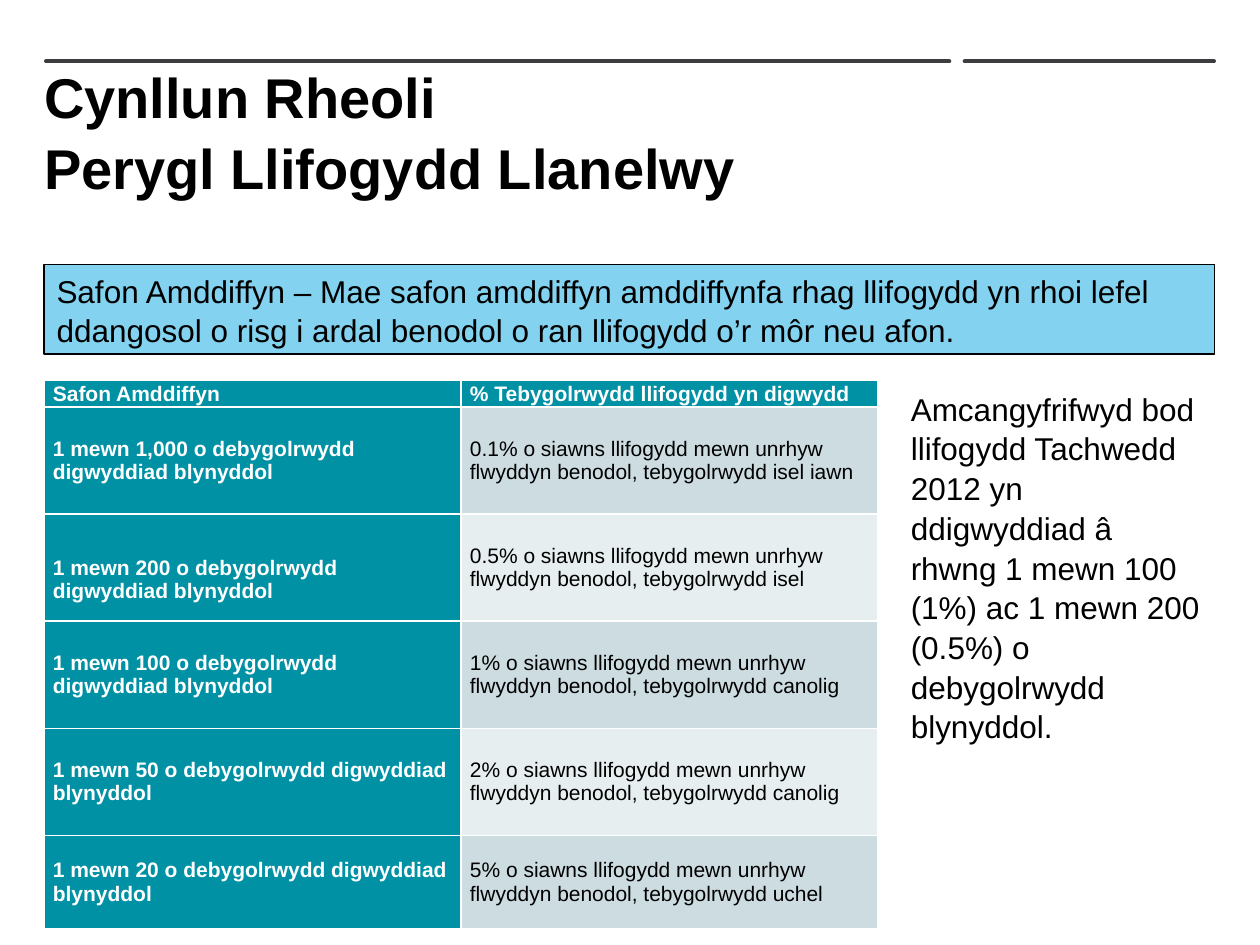
from pptx import Presentation
from pptx.dml.color import RGBColor
from pptx.enum import shapes, text
from pptx.util import Inches, Pt

BLACK = RGBColor(0x00, 0x00, 0x00)
WHITE = RGBColor(0xFF, 0xFF, 0xFF)
CHARCOAL = RGBColor(0x3C, 0x3C, 0x41)
SKY = RGBColor(0x82, 0xD2, 0xF0)
TEAL = RGBColor(0x00, 0x91, 0xA5)
BANDS = (RGBColor(0xCC, 0xDC, 0xE1), RGBColor(0xE7, 0xEE, 0xF0))

LEFT = 0.35
HEADINGS = ("Safon Amddiffyn", "% Tebygolrwydd llifogydd yn digwydd")
RISKS = (
    ("1,000", "0.1%", "isel iawn"),
    ("200", "0.5%", "isel"),
    ("100", "1%", "canolig"),
    ("50", "2%", "canolig"),
    ("20", "5%", "uchel"),
)
ROW_HEIGHTS = (0.21, 0.85, 0.85, 0.85, 0.85, 0.74)
LOWERED_ROW = 2


def write(frame, words, size=18, color=BLACK, bold=False, spacing=1.05,
          anchor=text.MSO_ANCHOR.TOP):
    frame.word_wrap = True
    frame.vertical_anchor = anchor
    para = frame.paragraphs[0]
    para.text = words
    para.alignment = text.PP_ALIGN.LEFT
    para.line_spacing = spacing
    para.font.name = "Arial"
    para.font.size = Pt(size)
    para.font.bold = bold
    para.font.color.rgb = color


def add_box(page, kind, left, top, width, height, fill):
    box = page.shapes.add_shape(
        kind, Inches(left), Inches(top), Inches(width), Inches(height))
    box.shadow.inherit = False
    box.fill.solid()
    box.fill.fore_color.rgb = fill
    box.line.fill.background()
    return box


def add_rule(page, left, width):
    rule = add_box(page, shapes.MSO_SHAPE.ROUNDED_RECTANGLE,
                   left, 0.47, width, 0.03, CHARCOAL)
    rule.adjustments[0] = 0.5


def set_title(page, words):
    title = page.shapes.title
    title.left, title.top = Inches(LEFT), Inches(0.36)
    title.width, title.height = Inches(7.2), Inches(1.34)
    frame = title.text_frame
    frame.auto_size = text.MSO_AUTO_SIZE.NONE
    frame.margin_left = frame.margin_right = 0
    frame.margin_top = frame.margin_bottom = 0
    write(frame, words, size=32, bold=True, anchor=text.MSO_ANCHOR.MIDDLE)


def add_callout(page, words):
    box = add_box(page, shapes.MSO_SHAPE.RECTANGLE, LEFT, 2.1, 9.29, 0.71, SKY)
    box.line.color.rgb = BLACK
    box.line.width = Pt(0.75)
    write(box.text_frame, words, anchor=text.MSO_ANCHOR.MIDDLE)


def add_note(page, words):
    box = page.shapes.add_textbox(
        Inches(7.13), Inches(3.03), Inches(2.52), Inches(2.83))
    write(box.text_frame, words)


def fill_cell(cell, words, fill, color, bold):
    cell.fill.solid()
    cell.fill.fore_color.rgb = fill
    cell.margin_left = cell.margin_right = Inches(0.07)
    cell.margin_top = cell.margin_bottom = 0
    cell.vertical_anchor = text.MSO_ANCHOR.MIDDLE
    write(cell.text_frame, words, size=12, color=color, bold=bold, spacing=1.0,
          anchor=None)


def add_risk_table(page):
    table = page.shapes.add_table(
        len(ROW_HEIGHTS), 2, Inches(LEFT), Inches(3.02),
        Inches(6.62), Inches(sum(ROW_HEIGHTS))).table
    for column in table.columns:
        column.width = Inches(3.31)
    for row, height in zip(table.rows, ROW_HEIGHTS):
        row.height = Inches(height)
    for index, heading in enumerate(HEADINGS):
        fill_cell(table.cell(0, index), heading, TEAL, WHITE, True)
    for index, (years, chance, level) in enumerate(RISKS, start=1):
        fill_cell(table.cell(index, 0),
                  f"1 mewn {years} o debygolrwydd digwyddiad blynyddol",
                  TEAL, WHITE, True)
        fill_cell(table.cell(index, 1),
                  f"{chance} o siawns llifogydd mewn unrhyw flwyddyn benodol, "
                  f"tebygolrwydd {level}",
                  BANDS[(index - 1) % 2], BLACK, False)
    table.cell(LOWERED_ROW, 0).margin_top = Inches(0.19)


def main():
    deck = Presentation()
    deck.slide_width, deck.slide_height = Inches(10), Inches(7.5)
    page = deck.slides.add_slide(deck.slide_layouts[5])
    add_rule(page, 7.64, 2.01)
    add_rule(page, LEFT, 7.2)
    set_title(page, "Cynllun Rheoli \vPerygl Llifogydd Llanelwy")
    add_callout(page, "Safon Amddiffyn – Mae safon amddiffyn amddiffynfa rhag "
                      "llifogydd yn rhoi lefel ddangosol o risg i ardal benodol "
                      "o ran llifogydd o’r môr neu afon.")
    add_risk_table(page)
    add_note(page, "Amcangyfrifwyd bod llifogydd Tachwedd 2012 yn ddigwyddiad â "
                   "rhwng 1 mewn 100 (1%) ac 1 mewn 200 (0.5%) o debygolrwydd "
                   "blynyddol.")
    deck.save("out.pptx")


if __name__ == "__main__":
    main()
